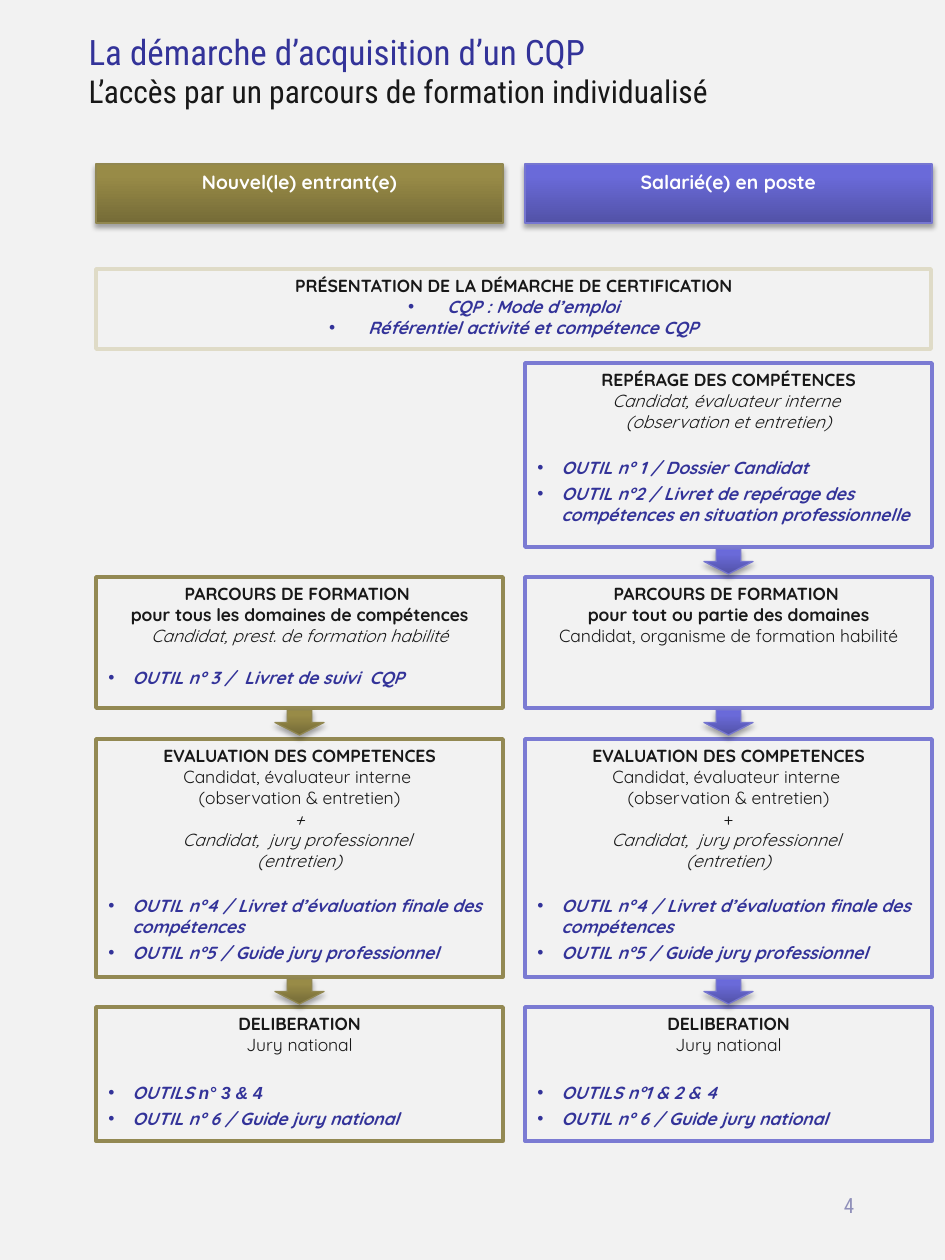
from copy import deepcopy
from typing import NamedTuple

from lxml.etree import SubElement
from pptx import Presentation
from pptx.dml.color import RGBColor
from pptx.enum.shapes import MSO_SHAPE
from pptx.enum.text import MSO_ANCHOR, MSO_AUTO_SIZE, PP_ALIGN
from pptx.oxml.ns import qn
from pptx.util import Inches, Pt

PX_PER_INCH = 126
BODY, HEADING = "Quicksand", "Roboto Condensed"
COLORS = {
    "paper": "F2F2F2", "ink": "181818", "navy": "333399", "white": "FFFFFF",
    "number": "9090BA", "intro": "DFDBC7", "shadow": "000000",
}
COLUMN_W, ARROW_W, ARROW_H, ARROW_GAP = 407, 49, 25, 2
HEADER_Y, HEADER_H = 164, 59


class Line(NamedTuple):
    text: str
    bold: bool = False
    italic: bool = False
    indent: int = 0  # px; a positive value makes a bullet
    before: float = 0
    align: PP_ALIGN = PP_ALIGN.CENTER
    color: str = "ink"
    size: int = 10
    arial_tail: str = ""


class Card(NamedTuple):
    y: int
    h: int
    lines: list[Line]


class Column(NamedTuple):
    x: int
    header: str
    border: str
    edge: str
    stops: list[tuple[float, str]]
    cards: list[Card]


def px(n: int) -> int:
    return round(Inches(1) * n / PX_PER_INCH)


def rgb(name: str) -> RGBColor:
    return RGBColor.from_string(COLORS.get(name, name))


def head(text: str) -> Line:
    return Line(text, bold=True)


def tool(text: str, before: float = 3, tail: str = "") -> Line:
    return Line(text, True, True, 24, before, PP_ALIGN.LEFT, "navy", arial_tail=tail)


def intro_item(text: str) -> Line:
    return Line(text, True, True, 39, color="navy")


def style_run(r, size: int, color: str, font: str) -> None:
    r.font.size, r.font.name = Pt(size), font
    r.font.color.rgb = rgb(color)


def write(s, lines: list[Line]) -> None:
    tf = s.text_frame
    tf.word_wrap = True
    tf.vertical_anchor = MSO_ANCHOR.TOP
    for i, line in enumerate(lines):
        p = tf.add_paragraph() if i else tf.paragraphs[0]
        p.alignment = line.align
        p.space_before = Pt(line.before)
        if line.indent:
            pPr = p._p.get_or_add_pPr()
            pPr.set("marL", str(px(line.indent)))
            pPr.set("indent", str(-px(line.indent)))
            SubElement(pPr, qn("a:buFont")).set("typeface", "Arial")
            SubElement(pPr, qn("a:buChar")).set("char", "•")
        for text, font in ((line.text, BODY), (line.arial_tail, "Arial")):
            if text:
                r = p.add_run()
                r.text = text
                style_run(r, line.size, line.color, font)
                r.font.bold, r.font.italic = line.bold, line.italic


def add_box(slide, x: int, y: int, w: int, h: int, border: str, lines: list[Line]) -> None:
    s = slide.shapes.add_shape(MSO_SHAPE.RECTANGLE, px(x), px(y), px(w), px(h))
    s.shadow.inherit = False
    s.fill.solid()
    s.fill.fore_color.rgb = rgb("paper")
    s.line.color.rgb, s.line.width = rgb(border), Pt(2)
    write(s, lines)


def add_glossy(slide, kind: MSO_SHAPE, x: int, y: int, w: int, h: int, column: Column):
    """Add a shape with the column's vertical gradient and a soft drop shadow."""
    s = slide.shapes.add_shape(kind, px(x), px(y), px(w), px(h))
    s.line.color.rgb, s.line.width = rgb(column.edge), Pt(0.75)
    s.fill.gradient()
    s.fill.gradient_angle = 90
    spPr = s.element.spPr
    stops = spPr.find(".//" + qn("a:gsLst"))
    stops.insert(1, deepcopy(stops[0]))
    for stop, (position, color) in zip(s.fill.gradient_stops, column.stops):
        stop.position, stop.color.rgb = position, rgb(color)
    s.shadow.inherit = False
    shadow = SubElement(spPr.find(qn("a:effectLst")), qn("a:outerShdw"), blurRad=str(Pt(3.1)),
                        dist=str(Pt(1.8)), dir="5400000", rotWithShape="0")
    tint = SubElement(shadow, qn("a:srgbClr"), val=COLORS["shadow"])
    SubElement(tint, qn("a:alpha"), val="35000")
    return s


def add_column(slide, column: Column) -> None:
    header = add_glossy(slide, MSO_SHAPE.RECTANGLE, column.x, HEADER_Y, COLUMN_W, HEADER_H, column)
    write(header, [Line(column.header, bold=True, color="white", size=11)])
    for card in column.cards:
        add_box(slide, column.x, card.y, COLUMN_W, card.h, column.border, card.lines)
    for card in column.cards[:-1]:
        add_glossy(slide, MSO_SHAPE.DOWN_ARROW, column.x + (COLUMN_W - ARROW_W) // 2,
                   card.y + card.h + ARROW_GAP, ARROW_W, ARROW_H, column)


def evaluation(plus_italic: bool) -> Card:
    return Card(739, 238, [
        head("EVALUATION DES COMPETENCES"),
        Line("Candidat, évaluateur interne "),
        Line("(observation & entretien)"),
        Line("+", italic=plus_italic),
        Line("Candidat,  jury professionnel ", italic=True),
        Line("(entretien)", italic=True),
        tool("OUTIL n°4 / Livret d’évaluation finale des compétences", 13.5),
        tool("OUTIL n°5 / Guide jury professionnel"),
    ])


def deliberation(tools: str, tail: str = "") -> Card:
    return Card(1007, 134, [
        head("DELIBERATION"),
        Line("Jury national"),
        tool(tools, 15, tail),
        tool("OUTIL n° 6 / Guide jury national"),
    ])


COLUMNS = [
    Column(96, "Nouvel(le) entrant(e)", "938953", "918750",
           [(0, "756B37"), (0.8, "988B47"), (1, "9A8D46")], [
        Card(577, 131, [
            head("PARCOURS DE FORMATION "),
            head("pour tous les domaines de compétences"),
            Line("Candidat, prest. de formation habilité", italic=True),
            tool("OUTIL n° 3 /  Livret de suivi  CQP", 12),
        ]),
        evaluation(plus_italic=True),
        deliberation("OUTILS ", "n° 3 & 4"),
    ]),
    Column(525, "Salarié(e) en poste", "7B7BD3", "7676D0",
           [(0, "5252A7"), (0.8, "6A6AD9"), (1, "6969DC")], [
        Card(363, 184, [
            head("REPÉRAGE DES COMPÉTENCES"),
            Line("Candidat, évaluateur interne ", italic=True),
            Line("(observation et entretien)", italic=True),
            tool("OUTIL n° 1 / Dossier Candidat", 14),
            tool("OUTIL n°2 / Livret de repérage des compétences en situation professionnelle"),
        ]),
        Card(577, 131, [
            head("PARCOURS DE FORMATION "),
            head("pour tout ou partie des domaines"),
            Line("Candidat, organisme de formation habilité"),
        ]),
        evaluation(plus_italic=False),
        deliberation("OUTILS n°1 & 2 & 4"),
    ]),
]
INTRO = [
    head("PRÉSENTATION DE LA DÉMARCHE DE CERTIFICATION"),
    intro_item("CQP : Mode d’emploi"),
    intro_item("Référentiel activité et compétence CQP"),
]


def main() -> None:
    prs = Presentation()
    prs.slide_width, prs.slide_height = Inches(7.5), Inches(10)
    slide = prs.slides.add_slide(prs.slide_layouts[5])
    slide.background.fill.solid()
    slide.background.fill.fore_color.rgb = rgb("paper")

    title = slide.shapes.title
    title.left, title.top, title.width, title.height = px(76), px(25), px(850), px(90)
    tf = title.text_frame
    tf.text = "La démarche d’acquisition d’un CQP\vL’accès par un parcours de formation individualisé"
    tf.auto_size, tf.vertical_anchor = MSO_AUTO_SIZE.NONE, MSO_ANCHOR.MIDDLE
    p = tf.paragraphs[0]
    p.alignment = PP_ALIGN.LEFT
    for r, size, color in zip(p.runs, (20, 18), ("navy", "ink")):
        style_run(r, size, color, HEADING)

    add_box(slide, 96, 269, 835, 80, "intro", INTRO)
    for column in COLUMNS:
        add_column(slide, column)

    number = slide.shapes.add_textbox(px(823), px(1172), px(52), px(67))
    tf = number.text_frame
    tf.text = "4"
    tf.word_wrap, tf.vertical_anchor = True, MSO_ANCHOR.MIDDLE
    tf.paragraphs[0].alignment = PP_ALIGN.CENTER
    style_run(tf.paragraphs[0].runs[0], 12, "number", HEADING)
    prs.save("out.pptx")


if __name__ == "__main__":
    main()
